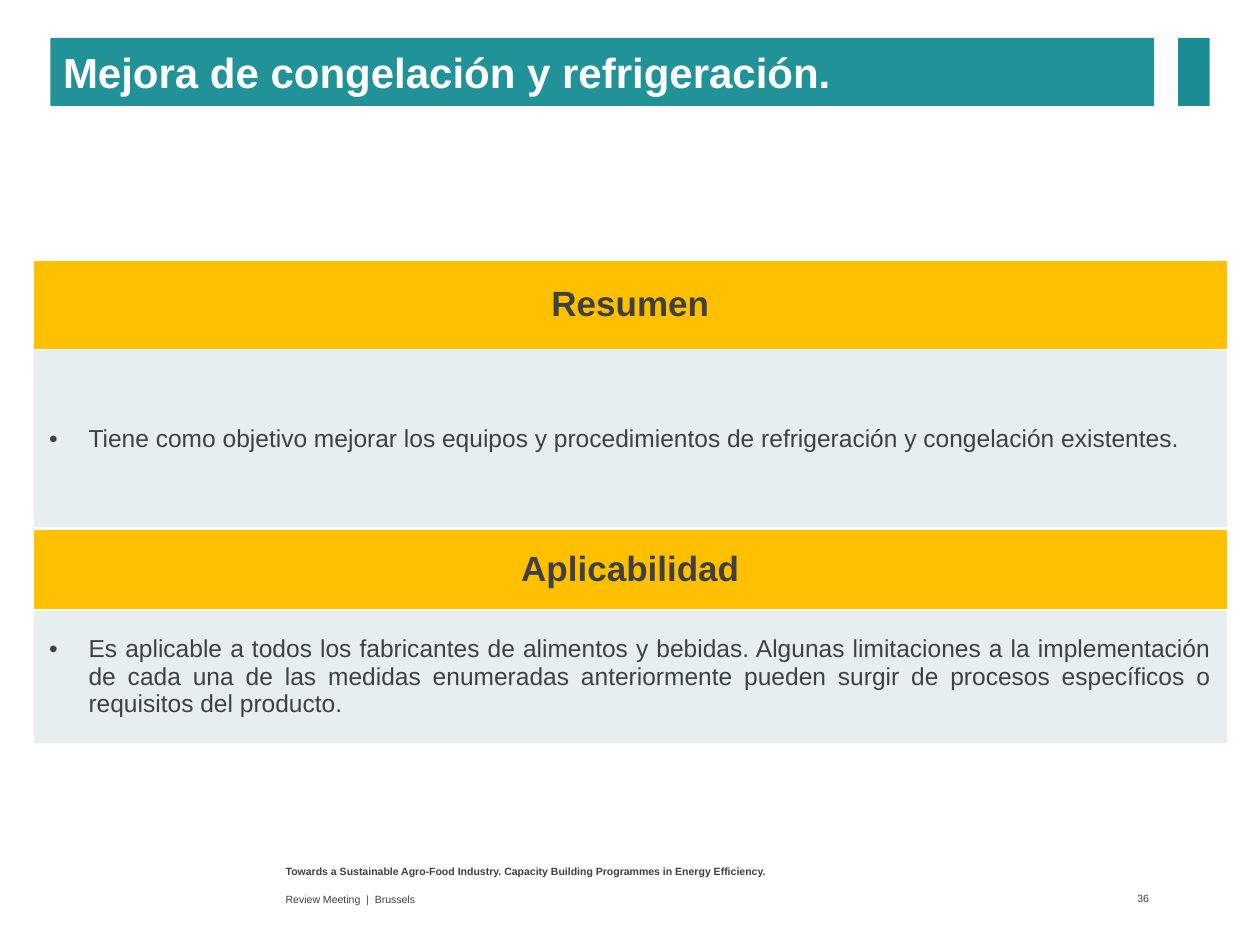
from pptx import Presentation
from pptx.dml.color import RGBColor
from pptx.enum.shapes import MSO_SHAPE
from pptx.enum.text import MSO_ANCHOR, MSO_AUTO_SIZE, PP_ALIGN
from pptx.oxml import parse_xml
from pptx.oxml.ns import nsdecls
from pptx.util import Pt

COLORS = {"teal": "209298", "accent": "1B8E95", "white": "FFFFFF",
          "text": "404040", "header": "FFC000", "body": "E7EEEF"}


def paint(fill, color):
    fill.solid()
    fill.fore_color.rgb = RGBColor.from_string(COLORS[color])


def write(tf, text, size, bold=False, color="text", align=PP_ALIGN.LEFT):
    p = tf.paragraphs[0]
    p.alignment = align
    r = p.add_run()
    r.text = text
    formats = {"name": "Arial", "size": Pt(size), "bold": bold}
    for name, value in formats.items():
        setattr(r.font, name, value)
    r.font.color.rgb = RGBColor.from_string(COLORS[color])


prs = Presentation()
prs.slide_width, prs.slide_height = Pt(720), Pt(540)
s = prs.slides.add_slide(prs.slide_layouts[5])

title = s.shapes.title
title.left, title.top, title.width, title.height = Pt(28.8), Pt(21.6), Pt(630.7), Pt(38.9)
paint(title.fill, "teal")
tf = title.text_frame
tf.auto_size = MSO_AUTO_SIZE.NONE
tf.vertical_anchor = MSO_ANCHOR.MIDDLE
write(tf, "Mejora de congelación y refrigeración.", 24, True, "white")

sp = s.shapes.add_shape(MSO_SHAPE.RECTANGLE, Pt(673.2), Pt(21.6), Pt(18), Pt(38.9))
sp.shadow.inherit = False
sp.line.fill.background()
paint(sp.fill, "accent")

footers = [
    ("Towards a Sustainable Agro-Food Industry. Capacity Building Programmes in Energy Efficiency.",
     156.2, 491, 396, 15.1, 7.2, True, MSO_ANCHOR.TOP, PP_ALIGN.LEFT),
    ("Review Meeting  |  Brussels",
     156.2, 506.9, 396, 13.7, 7.2, False, MSO_ANCHOR.MIDDLE, PP_ALIGN.LEFT),
    ("36", 619.2, 506.2, 40.3, 14.4, 2.9, False, MSO_ANCHOR.MIDDLE, PP_ALIGN.RIGHT),
]
for text, x, y, w, h, right, bold, anchor, align in footers:
    tf = s.shapes.add_textbox(Pt(x), Pt(y), Pt(w), Pt(h)).text_frame
    tf.word_wrap = True
    tf.vertical_anchor = anchor
    tf.margin_right = Pt(right)
    write(tf, text, 6, bold, align=align)

sections = [
    (148.5, (51.1, 102.2), "Resumen",
     "Tiene como objetivo mejorar los equipos y procedimientos de refrigeración y congelación existentes."),
    (302.4, (46.1, 76.3), "Aplicabilidad",
     "Es aplicable a todos los fabricantes de alimentos y bebidas. Algunas limitaciones a la "
     "implementación de cada una de las medidas enumeradas anteriormente pueden surgir de "
     "procesos específicos o requisitos del producto."),
]
styles = [("header", 20, True, PP_ALIGN.CENTER, 7.2, 3.6),
          ("body", 14, False, PP_ALIGN.JUSTIFY, 9.2, 4.6)]
for top, heights, *texts in sections:
    table = s.shapes.add_table(2, 1, Pt(18.9), Pt(top), Pt(682.6), Pt(sum(heights))).table
    for i, (fill, size, bold, align, mx, my) in enumerate(styles):
        table.rows[i].height = Pt(heights[i])
        cell = table.cell(i, 0)
        margins = {"margin_left": mx, "margin_right": mx, "margin_top": my, "margin_bottom": my}
        for name, value in margins.items():
            setattr(cell, name, Pt(value))
        cell.vertical_anchor = MSO_ANCHOR.MIDDLE
        tcPr = cell._tc.get_or_add_tcPr()
        for side in "LRTB":
            tcPr.append(parse_xml(
                f'<a:ln{side} {nsdecls("a")} w="{Pt(1)}"><a:solidFill>'
                f'<a:srgbClr val="{COLORS["white"]}"/></a:solidFill></a:ln{side}>'))
        paint(cell.fill, fill)
        tf = cell.text_frame
        if fill == "body":
            pPr = tf.paragraphs[0]._p.get_or_add_pPr()
            pPr.set("marL", str(Pt(22.5)))
            pPr.set("indent", str(-Pt(22.5)))
            pPr.append(parse_xml(f'<a:buFont {nsdecls("a")} typeface="Arial"/>'))
            pPr.append(parse_xml(f'<a:buChar {nsdecls("a")} char="•"/>'))
        write(tf, texts[i], size, bold, align=align)

prs.save("out.pptx")
